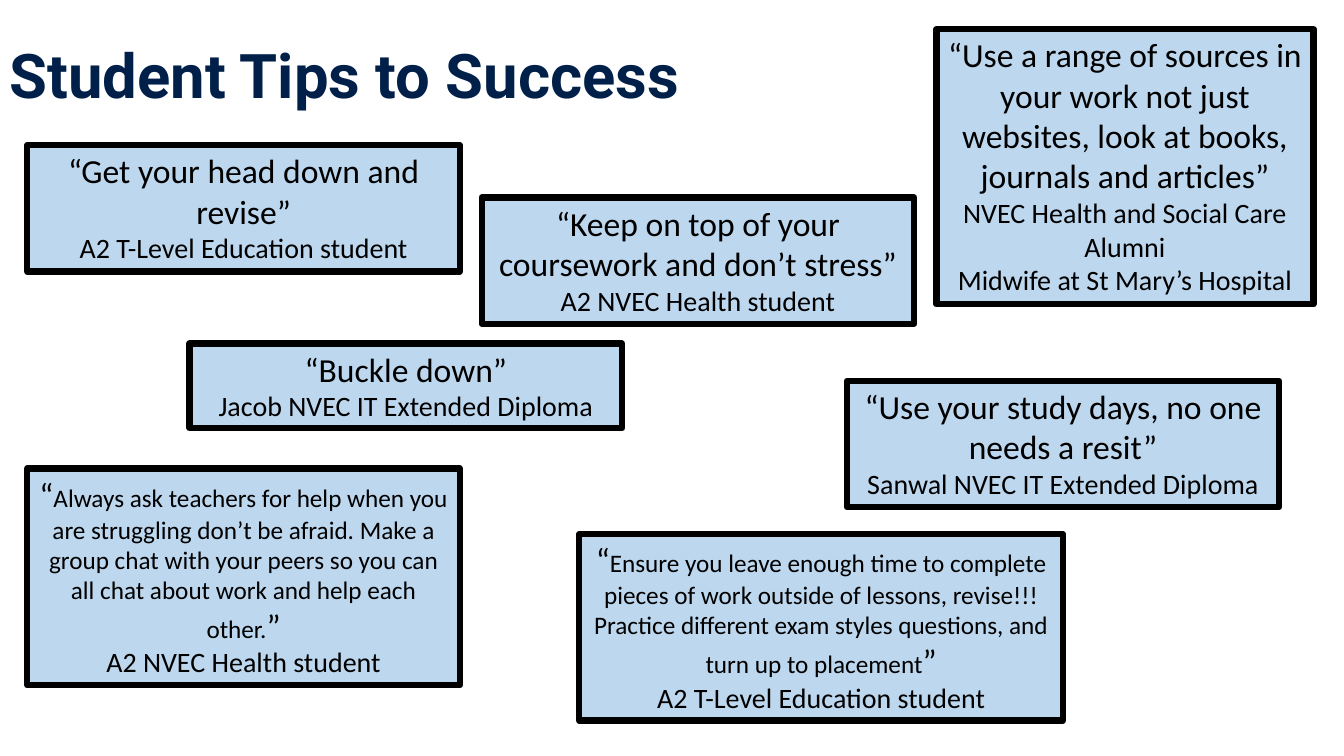
from pptx import Presentation
from pptx.dml.color import RGBColor
from pptx.enum.text import MSO_ANCHOR, MSO_AUTO_SIZE, PP_ALIGN
from pptx.util import Cm, Pt

NAVY = RGBColor(0x00, 0x1F, 0x49)
PALE_BLUE = RGBColor(0xBD, 0xD7, 0xEE)
BLACK = RGBColor(0x00, 0x00, 0x00)
MIDDLE = MSO_ANCHOR.MIDDLE
GROW = MSO_AUTO_SIZE.SHAPE_TO_FIT_TEXT
CENTER = PP_ALIGN.CENTER

QUOTE, LONG_QUOTE, STUDENT = 24, 18, 20  # text sizes in points
CARD_WIDTH = 10.9
TWO_LINE_HEIGHT = 3.18


def add_run(paragraph, text, size, font="Calibri", color=BLACK, bold=False):
    run = paragraph.add_run()
    run.text = text
    run.font.size = Pt(size)
    run.font.name = font
    run.font.color.rgb = color
    run.font.bold = bold


prs = Presentation()
prs.slide_width, prs.slide_height = Cm(33.87), Cm(19.05)
slide = prs.slides.add_slide(prs.slide_layouts[6])

# Title
title = slide.shapes.add_textbox(Cm(0), Cm(0.13), Cm(29.21), Cm(3.68)).text_frame
title.word_wrap = True
title.vertical_anchor = MIDDLE
title.paragraphs[0].line_spacing = 0.9
add_run(title.paragraphs[0], "Student Tips to Success", 44, "Roboto", NAVY, True)

# Tips: left, top, width, height (cm), quote runs, lines about the student
tips = [
    (0.69, 3.66, CARD_WIDTH, TWO_LINE_HEIGHT,
     [("“Get your head down and revise”", QUOTE)],
     ["A2 T-Level Education student"]),
    (23.6, 0.74, 9.5, 6.93,
     [("“Use a range of sources in your work not just websites, "
       "look at books, journals and articles”", QUOTE)],
     ["NVEC Health and Social Care Alumni", "Midwife at St Mary’s Hospital"]),
    (12.14, 4.98, CARD_WIDTH, TWO_LINE_HEIGHT,
     [("“Keep on top of your coursework and don’t stress”", QUOTE)],
     ["A2 NVEC Health student"]),
    (0.69, 11.81, CARD_WIDTH, 5.46,
     [("“", QUOTE),
      ("Always ask teachers for help when you are struggling don’t be afraid. "
       "Make a group chat with your peers so you can all chat about work "
       "and help each other.", LONG_QUOTE),
      ("”", QUOTE)],
     ["A2 NVEC Health student"]),
    (14.6, 13.46, 12.19, 4.7,
     [("“", QUOTE),
      ("Ensure you leave enough time to complete pieces of work outside of "
       "lessons, revise!!! Practice different exam styles questions, "
       "and turn up to placement", LONG_QUOTE),
      ("”", QUOTE)],
     ["A2 T-Level Education student"]),
    (4.78, 8.66, CARD_WIDTH, 2.13,
     [("“Buckle down”", QUOTE)],
     ["Jacob NVEC IT Extended Diploma"]),
    (21.34, 9.6, CARD_WIDTH, TWO_LINE_HEIGHT,
     [("“Use your study days, no one needs a resit”", QUOTE)],
     ["Sanwal NVEC IT Extended Diploma"]),
]

# Tip cards
for left, top, width, height, quote, student_lines in tips:
    card = slide.shapes.add_textbox(Cm(left), Cm(top), Cm(width), Cm(height))
    card.fill.solid()
    card.fill.fore_color.rgb = PALE_BLUE
    card.line.color.rgb = BLACK
    card.line.width = Pt(4.5)
    tip = card.text_frame
    tip.word_wrap = True
    tip.auto_size = GROW
    tip.paragraphs[0].alignment = CENTER
    for text, size in quote:
        add_run(tip.paragraphs[0], text, size)
    for line in student_lines:
        paragraph = tip.add_paragraph()
        paragraph.alignment = CENTER
        add_run(paragraph, line, STUDENT)

prs.save("out.pptx")
